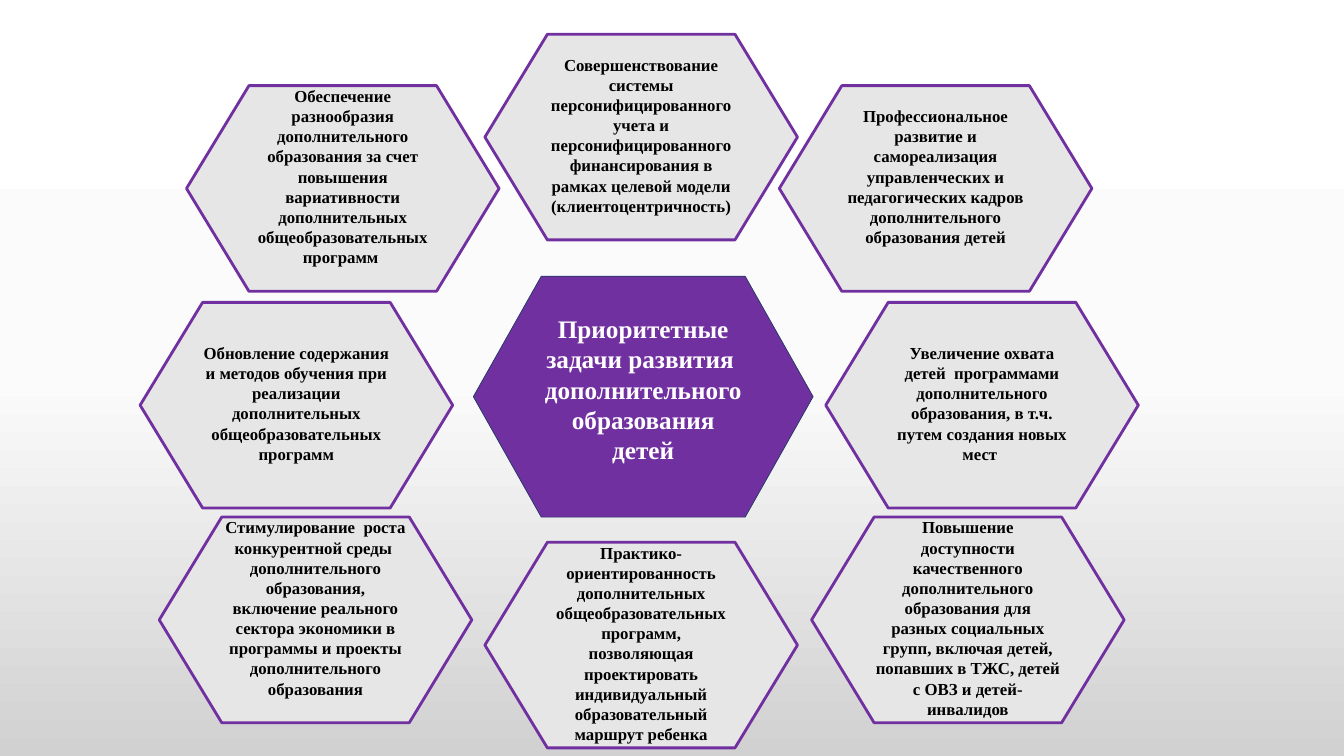
import pptx
import pptx.util
import pptx.dml.color
import pptx.enum.shapes
import pptx.enum.text
import lxml.etree

RGB = pptx.dml.color.RGBColor
PURPLE = RGB(0x70, 0x30, 0xA0)
NAVY = RGB(0x20, 0x38, 0x64)
GREY = RGB(0xE7, 0xE6, 0xE6)
BLACK = RGB(0, 0, 0)
WHITE = RGB(0xFF, 0xFF, 0xFF)
BACKGROUND = [(0, WHITE), (50, RGB(0xFB, 0xFB, 0xFB)), (100, RGB(0xD1, 0xD1, 0xD1))]
FONT = "Times New Roman"

# Tasks: row, shift from the axis in inches, lines left free above, paragraphs
TASKS = [
    ("upper", -2.96, 0, ["Обеспечение разнообразия дополнительного образования за счет повышения "
                         "вариативности дополнительных общеобразовательных программ "]),
    ("middle", -3.42, 2, ["Обновление содержания и методов обучения при реализации\n"
                          "дополнительных общеобразовательных программ"]),
    ("lower", -3.23, 0, ["Стимулирование  роста конкурентной среды  дополнительного образования,",
                         "включение реального сектора экономики в программы и проекты "
                         "дополнительного образования"]),
    ("top", 0, 1, ["Совершенствование системы персонифицированного учета и\n"
                   "персонифицированного финансирования в рамках целевой модели",
                   "(клиентоцентричность)"]),
    ("upper", 2.92, 1, ["Профессиональное развитие и самореализация управленческих и "
                        "педагогических кадров дополнительного образования детей"]),
    ("middle", 3.38, 2, ["Увеличение охвата детей  программами дополнительного образования, в т.ч.",
                         "путем создания новых мест "]),
    ("lower", 3.24, 0, ["Повышение доступности качественного дополнительного образования для\n"
                        "разных социальных групп, включая детей, попавших в ТЖС, "
                        "детей с ОВЗ и детей-инвалидов"]),
    ("bottom", 0, 0, ["Практико-ориентированность дополнительных общеобразовательных\n"
                      "программ, позволяющая проектировать индивидуальный образовательный\n"
                      "маршрут ребенка"]),
]
GOAL = ["Приоритетные задачи развития  дополнительного образования детей"]

# Layout in inches
AXIS = 6.36
ROWS = {"top": 0.34, "upper": 0.85, "middle": 3, "lower": 5.13, "bottom": 5.38}
TASK_SIZE = (3.1, 2.04)
GOAL_SIZE = (3.37, 2.39)
GOAL_TOP, GOAL_SHIFT, GOAL_INSET = 2.74, 0.02, 0.37
LINE = 0.2


def write(shape, paragraphs, size=12, color=BLACK, inset=0):
    tf = shape.text_frame
    tf.word_wrap = True
    tf.vertical_anchor = pptx.enum.text.MSO_ANCHOR.TOP
    tf.margin_left = tf.margin_right = tf.margin_bottom = 0
    tf.margin_top = pptx.util.Inches(inset)
    for i, text in enumerate(paragraphs):
        p = tf.add_paragraph() if i else tf.paragraphs[0]
        p.alignment = pptx.enum.text.PP_ALIGN.CENTER
        for j, part in enumerate(text.split("\n")):
            if j:
                p.add_line_break()
            r = p.add_run()
            r.text = part
            r.font.name, r.font.size, r.font.bold = FONT, pptx.util.Pt(size), True
            r.font.color.rgb = color


def add_hexagon(slide, shift, top, size, fill, line, weight):
    left = AXIS + shift - size[0] / 2
    box = [pptx.util.Inches(v) for v in (left, top, *size)]
    sp = slide.shapes.add_shape(pptx.enum.shapes.MSO_SHAPE.FLOWCHART_PREPARATION, *box)
    sp.shadow.inherit = False
    sp.fill.solid()
    sp.fill.fore_color.rgb = fill
    sp.line.color.rgb = line
    sp.line.width = pptx.util.Pt(weight)
    return sp


def paint_background(slide):
    fill = slide.background.fill
    fill.gradient()
    grad = slide.background._cSld.find(".//" + pptx.oxml.ns.qn("a:gradFill"))
    for child in list(grad):
        grad.remove(child)
    qn = pptx.oxml.ns.qn
    stops = lxml.etree.SubElement(grad, qn("a:gsLst"))
    for share, color in BACKGROUND:
        stop = lxml.etree.SubElement(stops, qn("a:gs"), pos=str(share * 1000))
        lxml.etree.SubElement(stop, qn("a:srgbClr"), val=str(color))
    lxml.etree.SubElement(grad, qn("a:lin"), ang="5400000", scaled="0")


def main():
    prs = pptx.Presentation()
    prs.slide_width, prs.slide_height = pptx.util.Inches(13.33), pptx.util.Inches(7.5)
    slide = prs.slides.add_slide(prs.slide_layouts[6])
    paint_background(slide)

    # Ring of tasks
    for row, shift, free_lines, paragraphs in TASKS:
        sp = add_hexagon(slide, shift, ROWS[row], TASK_SIZE, GREY, PURPLE, 2)
        write(sp, paragraphs, inset=free_lines * LINE)

    # Central goal
    sp = add_hexagon(slide, GOAL_SHIFT, GOAL_TOP, GOAL_SIZE, PURPLE, NAVY, 0.5)
    write(sp, GOAL, size=18, color=WHITE, inset=GOAL_INSET)

    prs.save("out.pptx")


if __name__ == "__main__":
    main()
